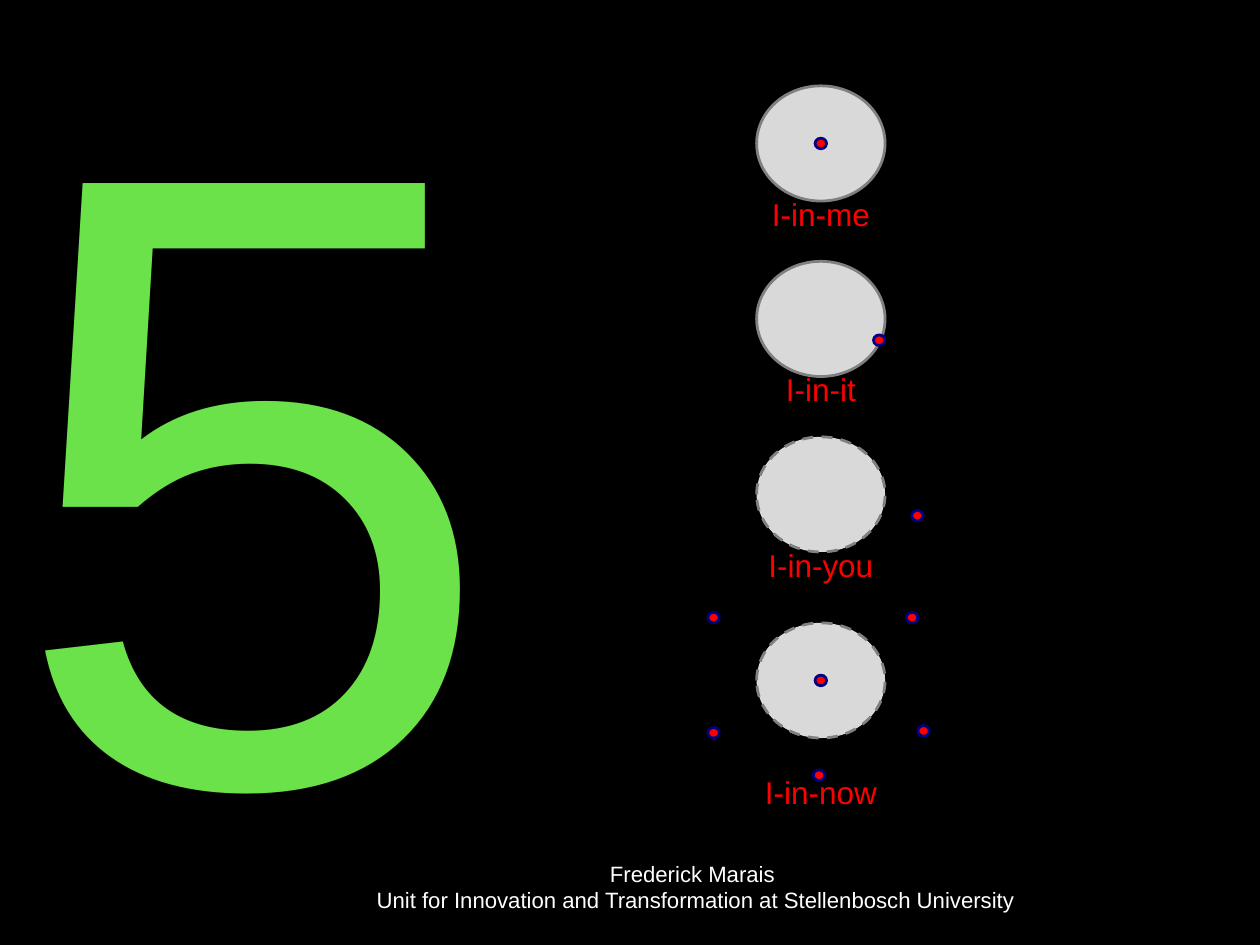
from dataclasses import dataclass

from pptx import Presentation
from pptx.dml.color import RGBColor
from pptx.enum.dml import MSO_LINE
from pptx.enum.shapes import MSO_SHAPE
from pptx.enum.text import MSO_ANCHOR, MSO_AUTO_SIZE, PP_ALIGN
from pptx.util import Pt

OVAL = MSO_SHAPE.OVAL
DOT = MSO_SHAPE.FLOWCHART_CONNECTOR
DASH = MSO_LINE.DASH
TOP, MIDDLE = MSO_ANCHOR.TOP, MSO_ANCHOR.MIDDLE
NO_FIT = MSO_AUTO_SIZE.NONE
CENTER = PP_ALIGN.CENTER

COLORS = {
    "background": "000000",
    "number": "6CE24A",
    "label": "FF0000",
    "footer": "FFFFFF",
    "circle": "D9D9D9",
    "circle_line": "808080",
    "dot": "FF0000",
    "dot_line": "000080",
}
FONT = "Arial"
CENTER_X = 667.1
CIRCLE_SIZE = (104.4, 93.6)
DOT_SIZE = (9.36, 8.64)
LABEL_SIZE = (176, 38.2)


@dataclass
class Field:
    label: str
    center_y: float
    dots: list[tuple[float, float]]
    dashed: bool = False
    label_offset: float = 38.2


FIELDS = [
    Field("I-in-me", 116.6, [(0, 0)]),
    Field("I-in-it", 259.2, [(47.5, 17.3)]),
    Field("I-in-you", 401.8, [(78.5, 17.3)], dashed=True),
    Field(
        "I-in-now",
        553,
        [(-1.4, 77), (-87.1, 42.5), (-87.1, -51.1), (74.2, -51.1), (83.5, 41), (0, 0)],
        dashed=True,
        label_offset=72,
    ),
]


def rgb(name: str) -> RGBColor:
    return RGBColor.from_string(COLORS[name])


def write_text(sp, text: str, *, size: float, color: str, anchor=TOP,
               inset_x: float = 7.2, inset_y: float = 3.6) -> None:
    tf = sp.text_frame
    tf.word_wrap = True
    tf.auto_size = NO_FIT
    tf.vertical_anchor = anchor
    tf.margin_left = tf.margin_right = Pt(inset_x)
    tf.margin_top = tf.margin_bottom = Pt(inset_y)
    for i, line in enumerate(text.split("\n")):
        p = tf.paragraphs[0] if i == 0 else tf.add_paragraph()
        p.alignment = CENTER
        r = p.add_run()
        r.text = line
        r.font.name = FONT
        r.font.size = Pt(size)
        r.font.color.rgb = rgb(color)


def draw_round(s, kind, x: float, y: float, size: tuple[float, float],
               color: str, dashed: bool = False) -> None:
    w, h = size
    sp = s.shapes.add_shape(kind, Pt(x - w / 2), Pt(y - h / 2), Pt(w), Pt(h))
    sp.shadow.inherit = False
    sp.fill.solid()
    sp.fill.fore_color.rgb = rgb(color)
    sp.line.color.rgb = rgb(f"{color}_line")
    sp.line.width = Pt(2.25)
    if dashed:
        sp.line.dash_style = DASH


def draw_field(s, field: Field) -> None:
    draw_round(s, OVAL, CENTER_X, field.center_y, CIRCLE_SIZE, "circle", field.dashed)
    for dx, dy in field.dots:
        draw_round(s, DOT, CENTER_X + dx, field.center_y + dy, DOT_SIZE, "dot")
    w, h = LABEL_SIZE
    sp = s.shapes.add_textbox(
        Pt(CENTER_X - w / 2), Pt(field.center_y + field.label_offset), Pt(w), Pt(h))
    write_text(sp, field.label, size=25.6, color="label")


def main() -> None:
    prs = Presentation()
    prs.slide_width, prs.slide_height = Pt(1024), Pt(768)
    s = prs.slides.add_slide(prs.slide_layouts[5])
    s.background.fill.solid()
    s.background.fill.fore_color.rgb = rgb("background")

    title = s.shapes.title
    title.left, title.top = Pt(-36), Pt(13)
    title.width, title.height = Pt(483.8), Pt(682.6)
    write_text(title, "5", size=711.1, color="number", anchor=MIDDLE,
               inset_x=10.1, inset_y=5)

    footer = s.shapes.add_textbox(Pt(294.5), Pt(695.5), Pt(541.4), Pt(56.2))
    write_text(
        footer,
        "Frederick Marais \nUnit for Innovation and Transformation at Stellenbosch University",
        size=18, color="footer")

    for field in FIELDS:
        draw_field(s, field)
    prs.save("out.pptx")


if __name__ == "__main__":
    main()
